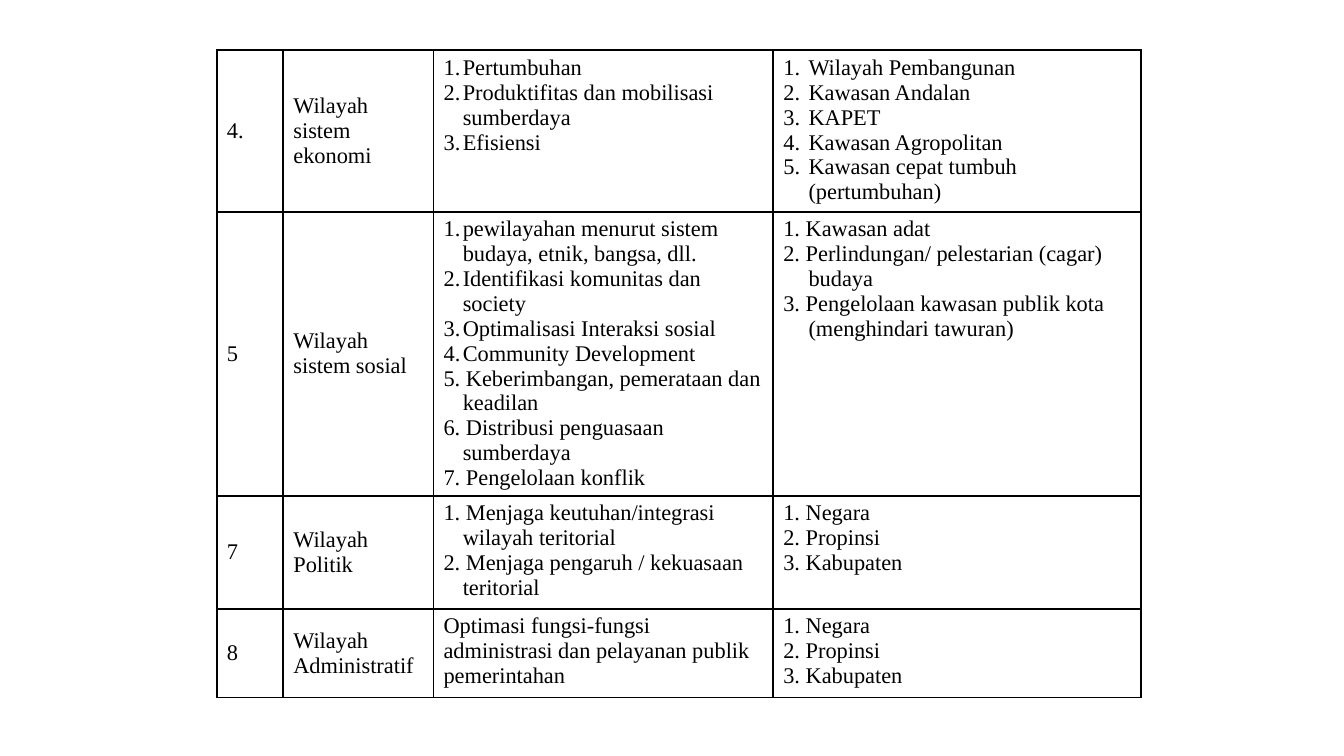
from dataclasses import dataclass

from lxml.etree import SubElement
from pptx import Presentation
from pptx.dml.color import RGBColor
from pptx.enum.text import MSO_ANCHOR
from pptx.oxml import parse_xml
from pptx.oxml.ns import nsdecls, qn
from pptx.table import _Cell
from pptx.util import Inches, Pt

COLORS = {"ink": "000000"}
FONT = "Times New Roman"
COL_WIDTHS = [0.66, 1.49, 3.37, 3.65]
ROW_HEIGHTS = [1.6, 2.82, 1.12, 0.88]


@dataclass
class Entry:
    lines: list[str]
    indent: float = 0
    auto_numbered: int = 0
    tab: float = 0
    anchor: MSO_ANCHOR = MSO_ANCHOR.TOP


def label(text: str) -> Entry:
    return Entry([text], anchor=MSO_ANCHOR.MIDDLE)


def goals(lines: list[str], auto_numbered: int = 0, tab: float = 0) -> Entry:
    return Entry(lines, 0.19, auto_numbered, tab)


def regions(lines: list[str], auto_numbered: int = 0) -> Entry:
    return Entry(lines, 0.25, auto_numbered)


GOVERNMENT = regions(["1. Negara", "2. Propinsi", "3. Kabupaten"])
ROWS = [
    [
        label("4."),
        label("Wilayah sistem ekonomi"),
        goals(["Pertumbuhan", "Produktifitas dan mobilisasi sumberdaya", "Efisiensi"], 3),
        regions([
            "Wilayah Pembangunan",
            "Kawasan Andalan",
            "KAPET",
            "Kawasan Agropolitan",
            "Kawasan cepat tumbuh (pertumbuhan)",
        ], 5),
    ],
    [
        label("5"),
        label("Wilayah sistem sosial"),
        goals([
            "pewilayahan menurut sistem budaya, etnik, bangsa, dll.",
            "Identifikasi komunitas dan society",
            "Optimalisasi Interaksi sosial",
            "Community Development",
            "5. Keberimbangan, pemerataan dan keadilan",
            "6. Distribusi penguasaan sumberdaya",
            "7. Pengelolaan konflik",
        ], 4, 0.18),
        regions([
            "1. Kawasan adat",
            "2. Perlindungan/ pelestarian (cagar) budaya",
            "3. Pengelolaan kawasan publik kota (menghindari tawuran)",
        ]),
    ],
    [
        label("7"),
        label("Wilayah Politik"),
        goals([
            "1. Menjaga keutuhan/integrasi wilayah teritorial",
            "2. Menjaga pengaruh / kekuasaan teritorial",
        ]),
        GOVERNMENT,
    ],
    [
        label("8"),
        label("Wilayah Administratif"),
        Entry(["Optimasi fungsi-fungsi administrasi dan pelayanan publik pemerintahan"]),
        GOVERNMENT,
    ],
]


def set_borders(cell: _Cell) -> None:
    tc_pr = cell._tc.get_or_add_tcPr()
    for i, side in enumerate(("lnL", "lnR", "lnT", "lnB")):
        tc_pr.insert(i, parse_xml(
            f'<a:{side} {nsdecls("a")} w="{Pt(1.5)}"><a:solidFill>'
            f'<a:srgbClr val="{COLORS["ink"]}"/></a:solidFill></a:{side}>'
        ))


def fill_cell(cell: _Cell, entry: Entry) -> None:
    cell.fill.background()
    set_borders(cell)
    cell.vertical_anchor = entry.anchor
    tf = cell.text_frame
    for i, line in enumerate(entry.lines):
        p = tf.add_paragraph() if i else tf.paragraphs[0]
        p_pr = p._p.get_or_add_pPr()
        if entry.indent:
            p_pr.set("marL", str(Inches(entry.indent)))
            p_pr.set("indent", str(-Inches(entry.indent)))
        if i < entry.auto_numbered:
            SubElement(p_pr, qn("a:buAutoNum"), type="arabicPeriod")
        if entry.tab:
            tabs = SubElement(p_pr, qn("a:tabLst"))
            SubElement(tabs, qn("a:tab"), pos=str(Inches(entry.tab)), algn="l")
        r = p.add_run()
        r.text = line
        r.font.name = FONT
        r.font.size = Pt(16)
        r.font.color.rgb = RGBColor.from_string(COLORS["ink"])


def main() -> None:
    prs = Presentation()
    prs.slide_width, prs.slide_height = Inches(13.33), Inches(7.5)
    s = prs.slides.add_slide(prs.slide_layouts[6])
    table = s.shapes.add_table(
        len(ROWS), len(COL_WIDTHS), Inches(2.15), Inches(0.5),
        Inches(sum(COL_WIDTHS)), Inches(sum(ROW_HEIGHTS)),
    ).table
    table.first_row = table.horz_banding = False
    for column, width in zip(table.columns, COL_WIDTHS):
        column.width = Inches(width)
    for row, height, entries in zip(table.rows, ROW_HEIGHTS, ROWS):
        row.height = Inches(height)
        for cell, entry in zip(row.cells, entries):
            fill_cell(cell, entry)
    prs.save("out.pptx")


if __name__ == "__main__":
    main()
